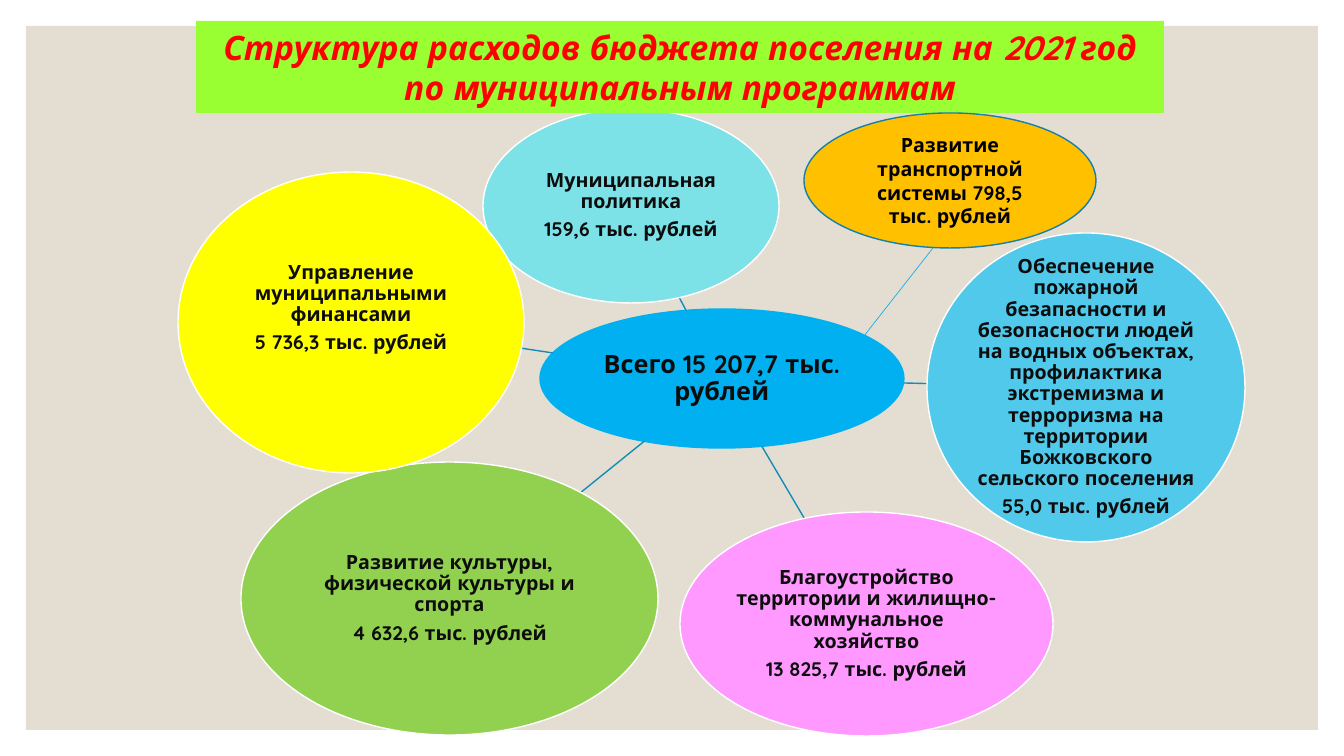
"""Build the slide on budget spending by municipal programme."""
from math import hypot

from lxml import etree
from pptx import Presentation
from pptx.dml.color import RGBColor
from pptx.enum import shapes, text
from pptx.oxml import ns
from pptx.util import Pt

SCALE = 914400 / 100.8
FONT = "Quicksand"
WHITE = RGBColor(0xFF, 0xFF, 0xFF)
BLACK = RGBColor(0, 0, 0)
INK = RGBColor(0x0D, 0x0D, 0x0D)
RED = RGBColor(0xFF, 0, 0)
LIME = RGBColor(0x99, 0xFF, 0x33)
BEIGE = RGBColor(0xE3, 0xDE, 0xD1)
BLUE = RGBColor(0, 0xB0, 0xF0)
AQUA = RGBColor(0x7D, 0xE2, 0xE7)
GREEN = RGBColor(0x92, 0xD0, 0x50)
YELLOW = RGBColor(0xFF, 0xFF, 0)
SKY = RGBColor(0x51, 0xC9, 0xEA)
PINK = RGBColor(0xFF, 0x99, 0xFF)
ORANGE = RGBColor(0xFF, 0xC0, 0)
ORANGE_EDGE = RGBColor(0x15, 0x80, 0xA9)
SPOKE = RGBColor(0x16, 0x8B, 0xB7)
TRANSPORT_SPOKE = RGBColor(0x1C, 0xAD, 0xE4)

TITLE = "Структура расходов бюджета поселения на 2021 год по муниципальным программам"
TITLE_BOX = (196, 21, 968, 92)
PANEL_BOX = (26, 26, 1292, 704)
TOTAL = "Всего 15 207,7 тыс. рублей"
HUB_BOX = (540, 309, 364, 139)
TRANSPORT = "Развитие транспортной системы 798,5 тыс. рублей"
TRANSPORT_BOX = (804, 113, 292, 135)
TRANSPORT_LINE = ((864, 336), (933, 248))
PROGRAMMES = [
    ("Муниципальная политика", "159,6 тыс. рублей", (483, 109, 296, 194), AQUA, 1),
    ("Развитие культуры, физической культуры и спорта", "4 632,6 тыс. рублей",
     (241, 462, 417, 273), GREEN, 1),
    ("Управление муниципальными финансами", "5 736,3 тыс. рублей",
     (178, 172, 346, 301), YELLOW, 30),
    ("Обеспечение пожарной безапасности и безопасности людей на водных объектах, "
     "профилактика экстремизма и терроризма на территории Божковского сельского поселения",
     "55,0 тыс. рублей", (927, 233, 318, 309), SKY, 1),
    ("Благоустройство территории и жилищно-коммунальное хозяйство",
     "13 825,7 тыс. рублей", (680, 512, 373, 224), PINK, 1),
]


def px(*lengths):
    return [round(length * SCALE) for length in lengths]


def write(shape, *lines, size=14, color=INK, italic=False, spacing=0.9, after=5,
          insets=(1, 1, 1, 1)):
    frame = shape.text_frame
    frame.word_wrap = True
    frame.auto_size = text.MSO_AUTO_SIZE.NONE
    frame.vertical_anchor = text.MSO_ANCHOR.MIDDLE
    (frame.margin_left, frame.margin_top,
     frame.margin_right, frame.margin_bottom) = px(*insets)
    frame.text = "\n".join(lines)
    for paragraph in frame.paragraphs:
        paragraph.alignment = text.PP_ALIGN.CENTER
        paragraph.line_spacing = spacing
        paragraph.space_before = Pt(0)
        paragraph.space_after = Pt(after if paragraph is not frame.paragraphs[-1] else 0)
        font = paragraph.runs[0].font
        font.name, font.size, font.bold, font.italic = FONT, Pt(size), True, italic
        font.color.rgb = color
    frame.paragraphs[-1].space_after = Pt(0)


def add_block(slide, kind, box, fill, line=None):
    shape = slide.shapes.add_shape(kind, *px(*box))
    shape.shadow.inherit = False
    shape.fill.solid()
    shape.fill.fore_color.rgb = fill
    if line is None:
        shape.line.fill.background()
    else:
        shape.line.color.rgb = line
        shape.line.width = Pt(1)
    return shape


def add_line(slide, start, end, color, width):
    line = slide.shapes.add_connector(shapes.MSO_CONNECTOR.STRAIGHT, *px(*start, *end))
    line.line.color.rgb = color
    line.line.width = Pt(width)
    etree.SubElement(line._element.spPr, ns.qn("a:effectLst"))


def center(box):
    left, top, width, height = box
    return left + width / 2, top + height / 2


def edge(box, target):
    """Return the point where the ellipse meets the ray from its centre to target."""
    x, y = center(box)
    dx, dy = target[0] - x, target[1] - y
    reach = 1 / hypot(dx / (box[2] / 2), dy / (box[3] / 2))
    return x + dx * reach, y + dy * reach


def main():
    presentation = Presentation()
    presentation.slide_width, presentation.slide_height = px(1344, 756)
    slide = presentation.slides.add_slide(presentation.slide_layouts[5])
    oval = shapes.MSO_SHAPE.OVAL

    add_block(slide, shapes.MSO_SHAPE.RECTANGLE, PANEL_BOX, BEIGE)
    hub = add_block(slide, oval, HUB_BOX, BLUE, BLUE)
    write(hub, TOTAL, size=18)

    for name, amount, box, fill, bottom in PROGRAMMES:
        add_line(slide, edge(HUB_BOX, center(box)), edge(box, center(HUB_BOX)), SPOKE, 1)
        programme = add_block(slide, oval, box, fill, WHITE)
        write(programme, name, amount, insets=(1, 1, 1, bottom))

    title = slide.shapes.title
    title.left, title.top, title.width, title.height = px(*TITLE_BOX)
    title.fill.solid()
    title.fill.fore_color.rgb = LIME
    write(title, TITLE, size=24, color=RED, italic=True, spacing=1.0,
          insets=(10, 5, 10, 5))
    slide.shapes._spTree.append(title._element)

    add_line(slide, *TRANSPORT_LINE, TRANSPORT_SPOKE, 0.5)
    transport = add_block(slide, oval, TRANSPORT_BOX, ORANGE, ORANGE_EDGE)
    write(transport, TRANSPORT, color=BLACK, spacing=1.0, insets=(10, 5, 10, 5))

    presentation.save("out.pptx")


if __name__ == "__main__":
    main()
